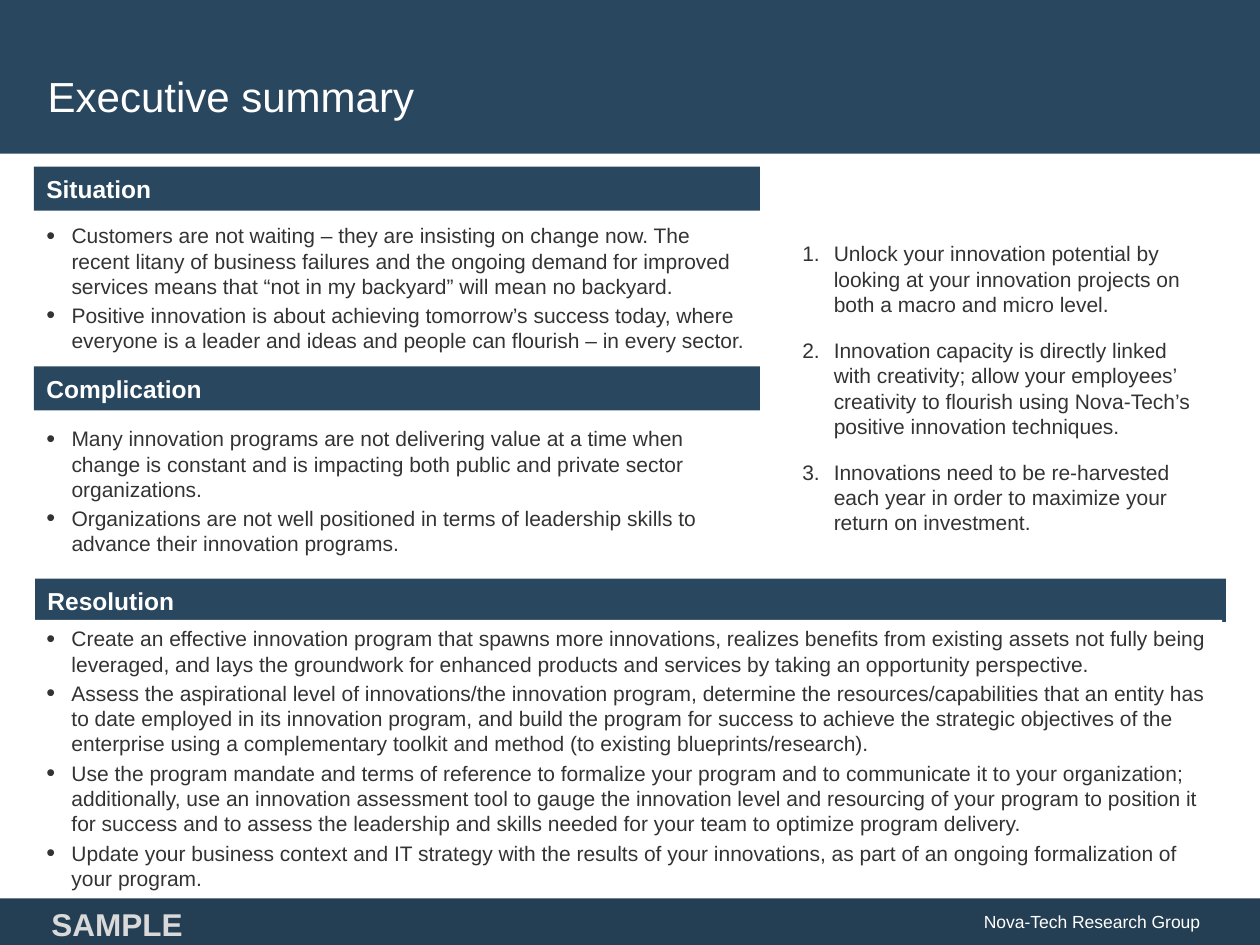
from lxml.etree import SubElement
from pptx import Presentation
from pptx.dml.color import RGBColor
from pptx.enum.shapes import MSO_SHAPE
from pptx.enum.text import MSO_ANCHOR, PP_ALIGN
from pptx.oxml.ns import qn
from pptx.util import Pt

NAVY = RGBColor(0x29, 0x47, 0x5F)
FOOTER = RGBColor(0x24, 0x3F, 0x54)
WHITE = RGBColor(0xFF, 0xFF, 0xFF)
GREY = RGBColor(0xD9, 0xD9, 0xD9)
INK = RGBColor(0x33, 0x33, 0x33)

prs = Presentation()
prs.slide_width, prs.slide_height = Pt(720), Pt(540)
s = prs.slides.add_slide(prs.slide_layouts[6])


def add_box(box, fill=None):
    x, y, w, h = [Pt(v) for v in box]
    if fill is None:
        sp = s.shapes.add_textbox(x, y, w, h)
    else:
        sp = s.shapes.add_shape(MSO_SHAPE.RECTANGLE, x, y, w, h)
        sp.shadow.inherit = False
        sp.fill.solid()
        sp.fill.fore_color.rgb = fill
        sp.line.fill.background()
    sp.text_frame.word_wrap = True
    return sp


def add_text(sp, lines, size, color, bold=False, align=PP_ALIGN.LEFT,
             anchor=MSO_ANCHOR.MIDDLE, number=False, bullet=False):
    tf = sp.text_frame
    tf.vertical_anchor = anchor
    for i, line in enumerate(lines):
        p = tf.paragraphs[0] if i == 0 else tf.add_paragraph()
        p.alignment = align
        r = p.add_run()
        r.text = line
        for name, value in {"name": "Arial", "size": Pt(size), "bold": bold}.items():
            setattr(r.font, name, value)
        r.font.color.rgb = color
        if not (number or bullet):
            continue
        p.space_before = Pt(6 if number else 2.4)
        p.space_after = Pt(6 if number else 0)
        indent = Pt(18 if number else 14.4)
        pPr = p._p.get_or_add_pPr()
        pPr.set("marL", str(indent))
        pPr.set("indent", str(-indent))
        if number:
            SubElement(pPr, qn("a:buFont"), typeface="+mj-lt")
            SubElement(pPr, qn("a:buAutoNum"), type="arabicPeriod")
        else:
            SubElement(pPr, qn("a:buSzPct"), val="120000")
            SubElement(pPr, qn("a:buFont"), typeface="Arial")
            SubElement(pPr, qn("a:buChar"), char="•")


add_box((0, -0.7, 720, 88.5), NAVY)
add_text(add_box((20.2, 20.2, 679, 69.1)), ["Executive summary"], 24, WHITE)

sections = [
    ("Situation", (19.4, 95.2, 414.8, 25.2), (19.4, 123.8, 414, 85), None, [
        "Customers are not waiting – they are insisting on change now. The recent litany of business failures and the ongoing demand for improved services means that “not in my backyard” will mean no backyard.",
        "Positive innovation is about achieving tomorrow’s success today, where everyone is a leader and ideas and people can flourish – in every sector.",
    ]),
    ("Complication", (19.4, 209.3, 414.8, 25.2), (19.4, 239.8, 414, 85), None, [
        "Many innovation programs are not delivering value at a time when change is constant and is impacting both public and private sector organizations.",
        "Organizations are not well positioned in terms of leadership skills to advance their innovation programs.",
    ]),
    ("Resolution", (20, 330.6, 680.5, 24.8), (19.4, 354.2, 679, 155.5), WHITE, [
        "Create an effective innovation program that spawns more innovations, realizes benefits from existing assets not fully being leveraged, and lays the groundwork for enhanced products and services by taking an opportunity perspective.",
        "Assess the aspirational level of innovations/the innovation program, determine the resources/capabilities that an entity has to date employed in its innovation program, and build the program for success to achieve the strategic objectives of the enterprise using a complementary toolkit and method (to existing blueprints/research).",
        "Use the program mandate and terms of reference to formalize your program and to communicate it to your organization; additionally, use an innovation assessment tool to gauge the innovation level and resourcing of your program to position it for success and to assess the leadership and skills needed for your team to optimize program delivery.",
        "Update your business context and IT strategy with the results of your innovations, as part of an ongoing formalization of your program.",
    ]),
]
for heading, bar, body, fill, bullets in sections:
    add_text(add_box(bar, NAVY), [heading], 14, WHITE, bold=True)
    add_text(add_box(body, fill), bullets, 12, INK, anchor=MSO_ANCHOR.TOP, bullet=True)

insights = [
    "Unlock your innovation potential by looking at your innovation projects on both a macro and micro level.",
    "Innovation capacity is directly linked with creativity; allow your employees’ creativity to flourish using Nova-Tech’s positive innovation techniques.",
    "Innovations need to be re-harvested each year in order to maximize your return on investment.",
]
add_text(add_box((451.4, 122.4, 242.6, 198.7)), insights, 12, INK, number=True)

footer = add_box((-0.7, 513.4, 720.7, 26.6), FOOTER)
footer.text_frame.margin_right = Pt(34.3)
add_text(footer, ["Nova-Tech Research Group"], 10, WHITE, align=PP_ALIGN.RIGHT)
add_text(add_box((18.7, 519.1, 96.5, 17.3)), ["SAMPLE"], 18, GREY, bold=True, align=PP_ALIGN.CENTER)

prs.save("out.pptx")
